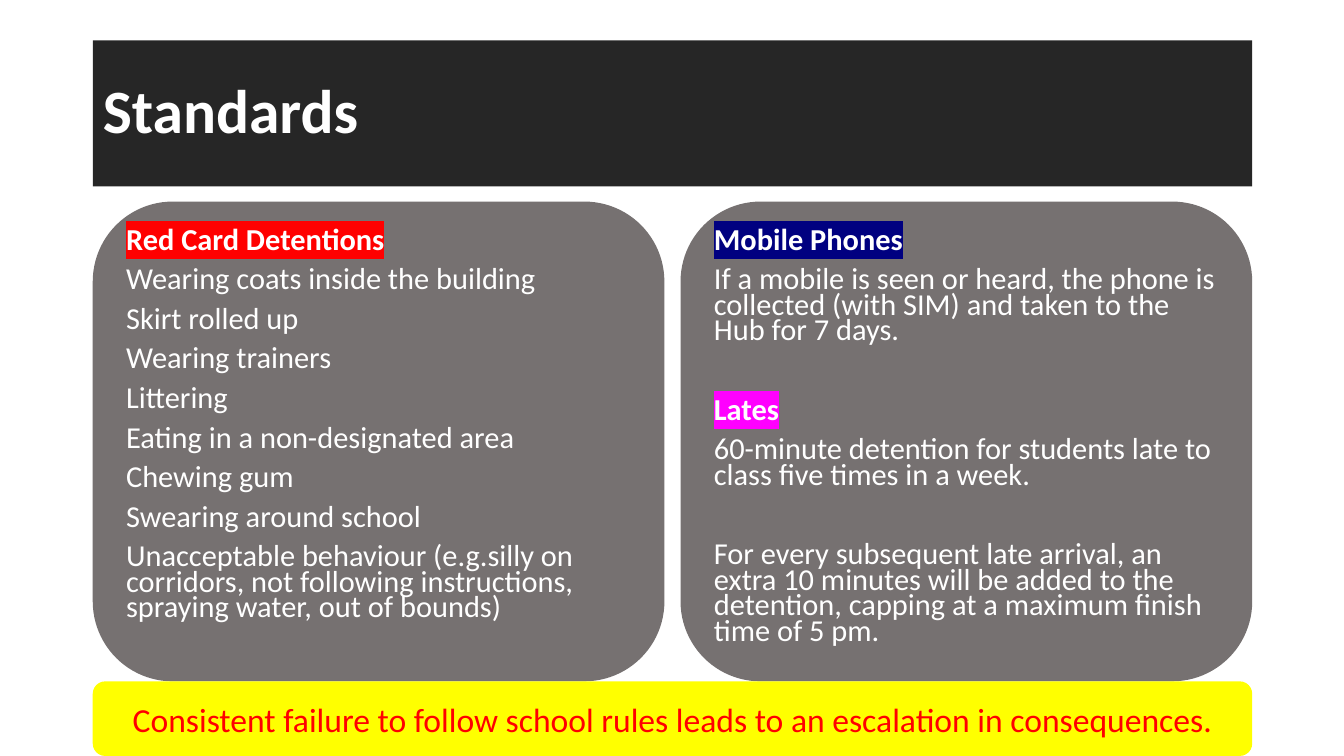
"""Build the school standards slide."""
from pptx import Presentation
from pptx import util as u
from pptx.dml.color import RGBColor
from pptx.enum import shapes, text
from pptx.oxml import parse_xml
from pptx.oxml.ns import nsdecls, qn


def rgb(value):
    return RGBColor.from_string(value)


def set_attributes(target, values):
    for name, value in values.items():
        setattr(target, name, value)


class StandardsSlide:
    font = "Calibri"
    white, red, dark, gray, yellow = "FFFFFF", "FF0000", "262626", "767171", "FFFF00"
    left, width, card_width = 0.92, 11.5, 5.67
    body = {"size": u.Pt(21.7), "bold": False}
    heading = {**body, "bold": True}

    def __init__(self, presentation):
        self.slide = presentation.slides.add_slide(presentation.slide_layouts[5])

    def place(self, shape, box, fill):
        names = ("left", "top", "width", "height")
        set_attributes(shape, dict(zip(names, map(u.Inches, box))))
        shape.fill.solid()
        shape.fill.fore_color.rgb = rgb(fill)

    def add_text(self, paragraph, content, color, font, layout, highlight=None):
        set_attributes(paragraph, layout)
        run = paragraph.add_run()
        run.text = content
        set_attributes(run.font, {"name": self.font, **font})
        run.font.color.rgb = rgb(color)
        if highlight:
            fill = run.font._element.find(qn("a:solidFill"))
            fill.addnext(parse_xml(
                f'<a:highlight {nsdecls("a")}><a:srgbClr val="{highlight}"/></a:highlight>'))

    def title(self, content):
        shape = self.slide.shapes.title
        self.place(shape, (self.left, 0.4, self.width, 1.45), self.dark)
        set_attributes(shape.text_frame, {
            "vertical_anchor": text.MSO_ANCHOR.MIDDLE,
            "auto_size": text.MSO_AUTO_SIZE.NONE,
        })
        self.add_text(shape.text_frame.paragraphs[0], content, self.white,
                      {"size": u.Pt(44), "bold": True},
                      {"alignment": text.PP_ALIGN.LEFT, "line_spacing": 0.9})

    def rounded_box(self, box, fill, anchor):
        shape = self.slide.shapes.add_shape(
            shapes.MSO_SHAPE.ROUNDED_RECTANGLE, *map(u.Inches, box))
        self.place(shape, box, fill)
        shape.line.fill.background()
        shape.shadow.inherit = False
        set_attributes(shape.text_frame, {"word_wrap": True, "vertical_anchor": anchor})
        return shape.text_frame

    def card(self, left, items):
        frame = self.rounded_box((left, 2, self.card_width, 4.76), self.gray,
                                 text.MSO_ANCHOR.TOP)
        for index, (content, highlight, space) in enumerate(items):
            paragraph = frame.add_paragraph() if index else frame.paragraphs[0]
            self.add_text(paragraph, content, self.white,
                          self.heading if highlight else self.body,
                          {"alignment": text.PP_ALIGN.LEFT, "line_spacing": 0.7,
                           "space_before": u.Pt(space if index else 0)}, highlight)

    def banner(self, content):
        frame = self.rounded_box((self.left, 6.76, self.width, 0.74), self.yellow,
                                 text.MSO_ANCHOR.MIDDLE)
        self.add_text(frame.paragraphs[0], content, self.red, {"size": u.Pt(24)},
                      {"alignment": text.PP_ALIGN.CENTER})


GAP, SECTION_GAP = 10, 38.5
RED_CARD_REASONS = [
    "Wearing coats inside the building",
    "Skirt rolled up",
    "Wearing trainers",
    "Littering",
    "Eating in a non-designated area",
    "Chewing gum",
    "Swearing around school",
    "Unacceptable behaviour (e.g.silly on corridors, not following instructions, "
    "spraying water, out of bounds)",
]
PHONES_AND_LATES = [
    ("Mobile Phones", "000080", GAP),
    ("If a mobile is seen or heard, the phone is collected (with SIM) "
     "and taken to the Hub for 7 days.", None, GAP),
    ("Lates", "FF00FF", SECTION_GAP),
    ("60-minute detention for students late to class five times in a week.", None, GAP),
    ("For every subsequent late arrival, an extra 10 minutes will be added to the "
     "detention, capping at a maximum finish time of 5 pm.", None, SECTION_GAP),
]


def main():
    presentation = Presentation()
    set_attributes(presentation, {"slide_width": u.Inches(13.33),
                                  "slide_height": u.Inches(7.5)})
    standards = StandardsSlide(presentation)
    standards.title("Standards")
    standards.card(standards.left, [("Red Card Detentions", standards.red, GAP)]
                   + [(reason, None, GAP) for reason in RED_CARD_REASONS])
    standards.card(standards.left + standards.width - standards.card_width,
                   PHONES_AND_LATES)
    standards.banner("Consistent failure to follow school rules leads to "
                     "an escalation in consequences.")
    presentation.save("out.pptx")


if __name__ == "__main__":
    main()
